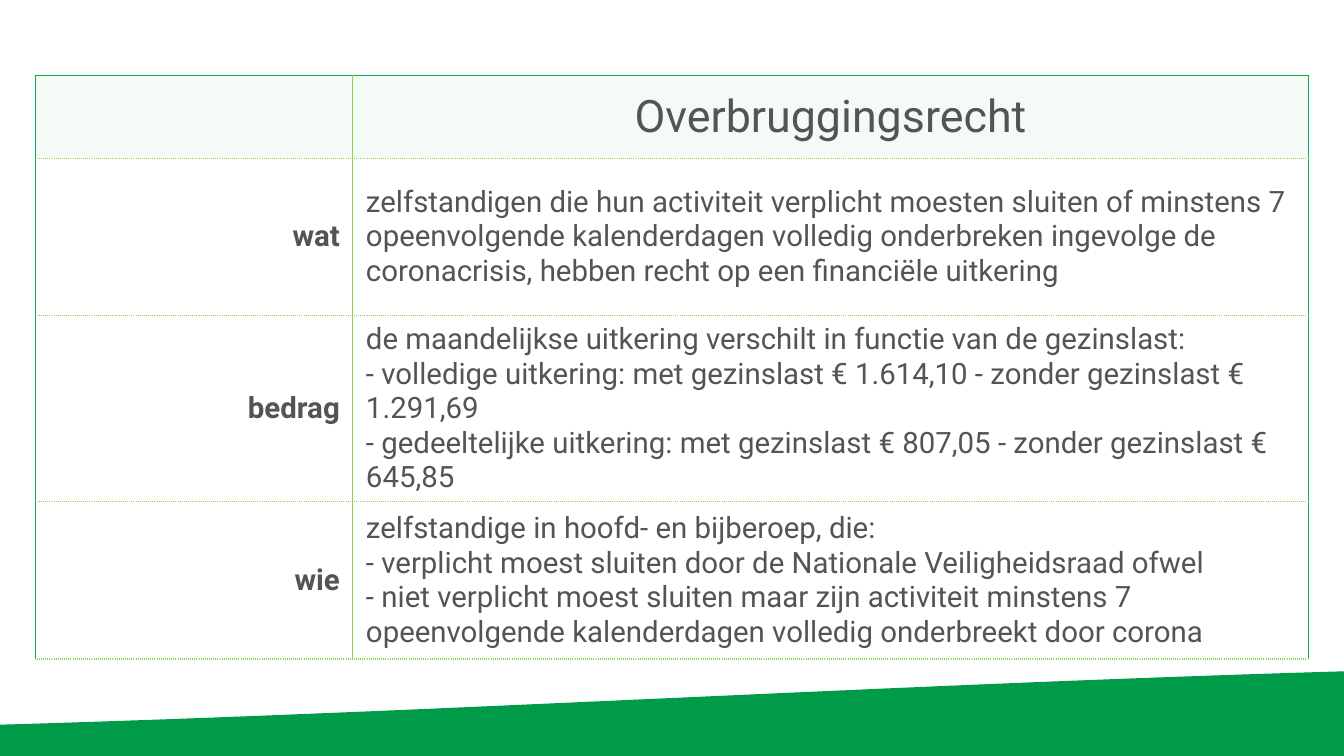
"""Build the slide with the Overbruggingsrecht table above a green wave."""
from dataclasses import dataclass

from lxml import etree
from pptx import Presentation
from pptx import util as u
from pptx.dml.color import RGBColor
from pptx.enum import text
from pptx.oxml import ns

WAVE_GREEN = RGBColor(0x00, 0x9B, 0x48)
FRAME_GREEN = RGBColor(0x00, 0xB0, 0x50)
LIME = RGBColor(0x92, 0xD0, 0x50)
PALE_GREEN = RGBColor(0xF4, 0xFB, 0xF7)
GREY = RGBColor(0x54, 0x54, 0x54)
FONT = "Roboto"
COLUMN_WIDTHS = (3.15, 9.48)
WAVE_CURVE = ((0, 7.19), (4.47, 7.06), (8.87, 6.79), (13.34, 6.66))
WAVE_STEPS = 40


@dataclass(frozen=True)
class Border:
    color: RGBColor
    dash: str = "solid"


@dataclass(frozen=True)
class Row:
    height: float
    label: str
    lines: tuple[str, ...]
    heading: bool = False


FRAME = Border(FRAME_GREEN)
DIVIDER = Border(LIME)
DOTTED = Border(LIME, "sysDot")

ROWS = (
    Row(0.82, "", ("Overbruggingsrecht",), heading=True),
    Row(1.56, "wat", (
        "zelfstandigen die hun activiteit verplicht moesten sluiten of minstens 7 "
        "opeenvolgende kalenderdagen volledig onderbreken ingevolge de "
        "coronacrisis, hebben recht op een financiële uitkering",
    )),
    Row(1.2, "bedrag", (
        "de maandelijkse uitkering verschilt in functie van de gezinslast:",
        "- volledige uitkering: met gezinslast € 1.614,10 - zonder gezinslast € 1.291,69\v"
        "- gedeeltelijke uitkering: met gezinslast € 807,05 - zonder gezinslast € 645,85",
    )),
    Row(1.56, "wie", (
        "zelfstandige in hoofd- en bijberoep, die:",
        "- verplicht moest sluiten door de Nationale Veiligheidsraad ofwel \v"
        "- niet verplicht moest sluiten maar zijn activiteit minstens 7 "
        "opeenvolgende kalenderdagen volledig onderbreekt door corona",
    )),
)


def curve_point(t: float) -> tuple[float, float]:
    """Return the point of the wave's cubic curve at t."""
    weights = ((1 - t) ** 3, 3 * t * (1 - t) ** 2, 3 * t ** 2 * (1 - t), t ** 3)
    x, y = (sum(w * c for w, c in zip(weights, axis)) for axis in zip(*WAVE_CURVE))
    return x, y


def draw_wave(page) -> None:
    """Draw the green wave along the bottom of the page."""
    outline = [curve_point(step / WAVE_STEPS) for step in range(WAVE_STEPS + 1)]
    outline += [(13.33, 7.5), (0, 7.5)]
    points = [(u.Inches(x), u.Inches(y)) for x, y in outline]
    builder = page.shapes.build_freeform(*points[0])
    builder.add_line_segments(points[1:], close=True)
    wave = builder.convert_to_shape()
    wave.shadow.inherit = False
    wave.fill.solid()
    wave.fill.fore_color.rgb = WAVE_GREEN
    wave.line.fill.background()


def set_borders(cell, left: Border, right: Border, top: Border, bottom: Border) -> None:
    """Put one-point borders on the four sides of a cell."""
    properties = cell._tc.get_or_add_tcPr()
    sides = {"a:lnL": left, "a:lnR": right, "a:lnT": top, "a:lnB": bottom}
    for position, (tag, border) in enumerate(sides.items()):
        line = etree.Element(ns.qn(tag), w=str(u.Pt(1)))
        fill = etree.SubElement(line, ns.qn("a:solidFill"))
        etree.SubElement(fill, ns.qn("a:srgbClr"), val=str(border.color))
        etree.SubElement(line, ns.qn("a:prstDash"), val=border.dash)
        properties.insert(position, line)


def write_cell(cell, lines: tuple[str, ...], align: text.PP_ALIGN,
               size: int, bold: bool) -> None:
    """Write paragraphs in one style into a cell."""
    cell.vertical_anchor = text.MSO_ANCHOR.MIDDLE
    cell.margin_left = cell.margin_right = u.Inches(0.13)
    cell.margin_top = cell.margin_bottom = u.Inches(0.07)
    cell.text_frame.text = "\n".join(lines)
    for para in cell.text_frame.paragraphs:
        para.alignment = align
        para.font.name = FONT
        para.font.size = u.Pt(size)
        para.font.bold = bold
        para.font.color.rgb = GREY


def draw_row(cells, row: Row) -> None:
    """Fill and frame the label and content cells of one table row."""
    label, content = cells
    size = 32 if row.heading else 21
    align = text.PP_ALIGN.CENTER if row.heading else text.PP_ALIGN.LEFT
    write_cell(label, (row.label,), text.PP_ALIGN.RIGHT, size, not row.heading)
    write_cell(content, row.lines, align, size, False)
    for cell in (label, content):
        if row.heading:
            cell.fill.solid()
            cell.fill.fore_color.rgb = PALE_GREEN
        else:
            cell.fill.background()
    top = FRAME if row.heading else DOTTED
    set_borders(label, FRAME, DIVIDER, top, DOTTED)
    set_borders(content, DIVIDER, FRAME, top, DOTTED)


def draw_table(page) -> None:
    """Draw the table of benefit details."""
    table = page.shapes.add_table(
        len(ROWS), len(COLUMN_WIDTHS), u.Inches(0.35), u.Inches(0.75),
        u.Inches(sum(COLUMN_WIDTHS)), u.Inches(sum(row.height for row in ROWS)),
    ).table
    table.first_row = table.horz_banding = False
    for column, width in zip(table.columns, COLUMN_WIDTHS):
        column.width = u.Inches(width)
    for table_row, row in zip(table.rows, ROWS):
        table_row.height = u.Inches(row.height)
        draw_row(table_row.cells, row)


def main() -> None:
    """Build and save the deck."""
    deck = Presentation()
    deck.slide_width, deck.slide_height = u.Inches(13.33), u.Inches(7.5)
    page = deck.slides.add_slide(deck.slide_layouts[6])
    draw_wave(page)
    draw_table(page)
    deck.save("out.pptx")


if __name__ == "__main__":
    main()
